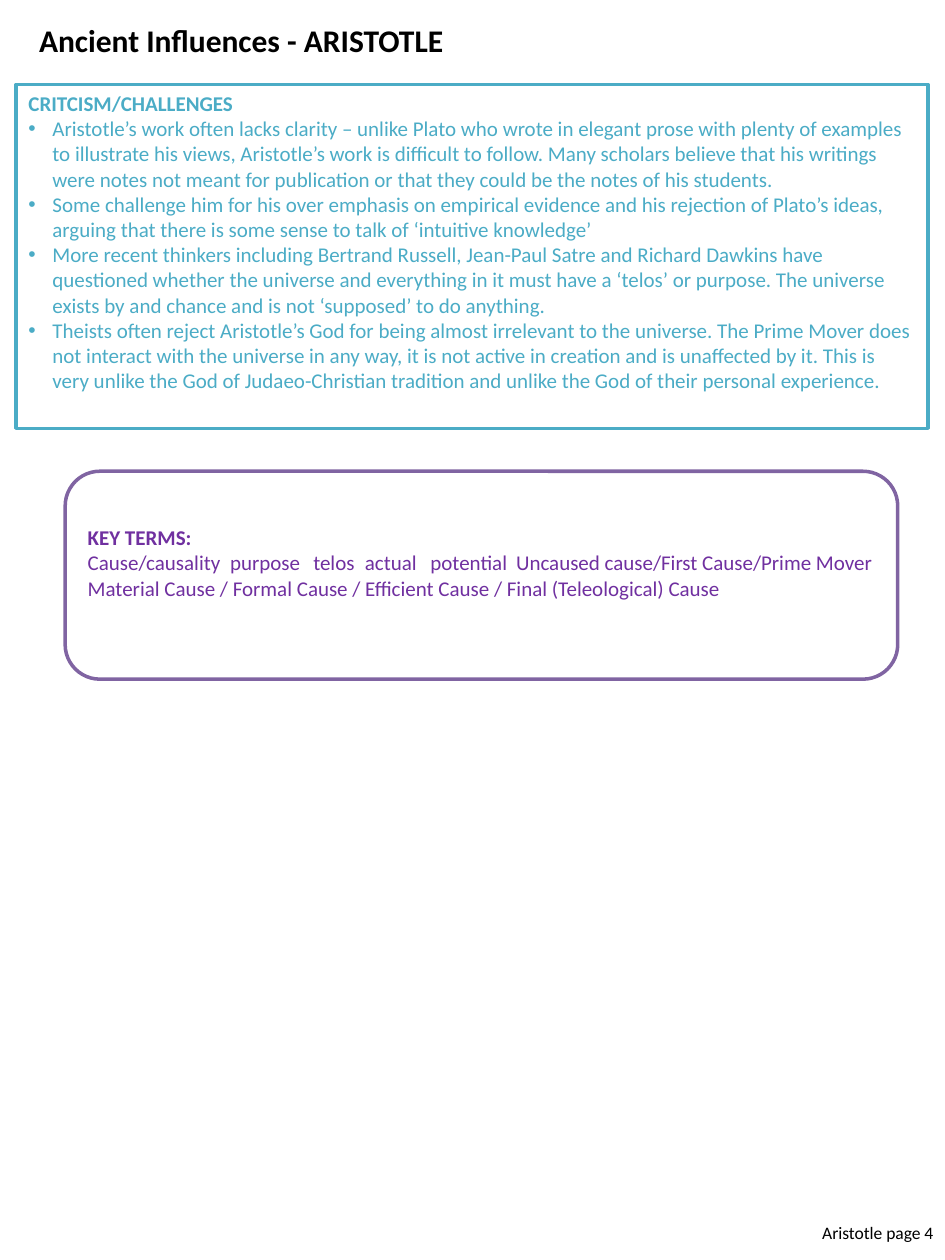
from lxml import etree
from pptx import Presentation
from pptx import util as u
from pptx.dml.color import RGBColor
from pptx.enum import shapes, text
from pptx.oxml.ns import qn

FONT = "Calibri"
BLACK = RGBColor(0x00, 0x00, 0x00)
WHITE = RGBColor(0xFF, 0xFF, 0xFF)
TEAL = RGBColor(0x4B, 0xAC, 0xC6)
LILAC = RGBColor(0x80, 0x64, 0xA2)
PURPLE = RGBColor(0x70, 0x30, 0xA0)

PAGE_WIDTH, PAGE_HEIGHT = 7.5, 10
BULLET_INDENT = 0.19
TERM_STOPS = (1.13, 1.79, 2.2, 2.72, 3.4)

CRITICISMS = (
    "Aristotle’s work often lacks clarity – unlike Plato who wrote in elegant prose with plenty of "
    "examples to illustrate his views, Aristotle’s work is difficult to follow. Many scholars believe "
    "that his writings were notes not meant for publication or that they could be the notes of his "
    "students.",
    "Some challenge him for his over emphasis on empirical evidence and his rejection of Plato’s ideas, "
    "arguing that there is some sense to talk of ‘intuitive knowledge’",
    "More recent thinkers including Bertrand Russell, Jean-Paul Satre and Richard Dawkins have "
    "questioned whether the universe and everything in it must have a ‘telos’ or purpose. The universe "
    "exists by and chance and is not ‘supposed’ to do anything.",
    "Theists often reject Aristotle’s God for being almost irrelevant to the universe. The Prime Mover "
    "does not interact with the universe in any way, it is not active in creation and is unaffected by "
    "it. This is very unlike the God of Judaeo-Christian tradition and unlike the God of their personal "
    "experience.",
)
TERMS = ("Cause/causality", "purpose", "telos", "actual", "potential",
         "Uncaused cause/First Cause/Prime Mover")
CAUSES = "Material Cause / Formal Cause / Efficient Cause / Final (Teleological) Cause"


def place(box, left, top, width, height):
    """Position a box by shares of the page size."""
    box.left, box.width = (u.Inches(PAGE_WIDTH * share) for share in (left, width))
    box.top, box.height = (u.Inches(PAGE_HEIGHT * share) for share in (top, height))


def style(para, size, color, bold=False):
    para.alignment = text.PP_ALIGN.LEFT
    for span in para.runs:
        span.font.name = FONT
        span.font.size = u.Pt(size)
        span.font.bold = bold
        span.font.color.rgb = color


def add_bullet(para):
    props = para._p.get_or_add_pPr()
    props.set("marL", str(u.Inches(BULLET_INDENT)))
    props.set("indent", str(-u.Inches(BULLET_INDENT)))
    etree.SubElement(props, qn("a:buFont"), typeface="Arial")
    etree.SubElement(props, qn("a:buChar"), char="•")


def add_tab_stops(para, stops):
    tabs = etree.SubElement(para._p.get_or_add_pPr(), qn("a:tabLst"))
    for stop in stops:
        etree.SubElement(tabs, qn("a:tab"), pos=str(u.Inches(stop)), algn="l")


def write_line(box, line, size, color, bold=False):
    """Format a single unwrapped line of text."""
    frame = box.text_frame
    frame.text = line
    frame.word_wrap = False
    frame.auto_size = text.MSO_AUTO_SIZE.NONE
    frame.vertical_anchor = text.MSO_ANCHOR.TOP
    style(frame.paragraphs[0], size, color, bold)


def add_panel(page, kind, area, outline, ink, lines):
    """Add an outlined panel whose first line is a bold heading."""
    panel = page.shapes.add_shape(kind, 0, 0, 0, 0)
    place(panel, *area)
    panel.shadow.inherit = False
    panel.fill.solid()
    panel.fill.fore_color.rgb = WHITE
    panel.line.color.rgb = outline
    panel.line.width = u.Pt(2)
    frame = panel.text_frame
    frame.word_wrap = True
    frame.vertical_anchor = text.MSO_ANCHOR.TOP
    frame.text = "\n".join(lines)
    for index, para in enumerate(frame.paragraphs):
        style(para, 12, ink, bold=index == 0)
    return frame


def main():
    deck = Presentation()
    deck.slide_width, deck.slide_height = u.Inches(PAGE_WIDTH), u.Inches(PAGE_HEIGHT)
    page = deck.slides.add_slide(deck.slide_layouts[5])

    # Title
    title = page.shapes.title
    place(title, 0.028, 0.012, 0.459, 0.04)
    write_line(title, "Ancient Influences - ARISTOTLE", 18, BLACK, bold=True)

    # Criticisms
    frame = add_panel(page, shapes.MSO_SHAPE.RECTANGLE, (0.017, 0.067, 0.965, 0.273),
                      TEAL, TEAL, ("CRITCISM/CHALLENGES", *CRITICISMS))
    for para in frame.paragraphs[1:]:
        add_bullet(para)

    # Page label
    label = page.shapes.add_textbox(0, 0, 0, 0)
    place(label, 0.857, 0.965, 0.147, 0.027)
    write_line(label, "Aristotle page 4", 10, BLACK)

    # Key terms, set slightly above the middle
    frame = add_panel(page, shapes.MSO_SHAPE.ROUNDED_RECTANGLE, (0.069, 0.374, 0.881, 0.165),
                      LILAC, PURPLE, ("KEY TERMS:", "\t".join(TERMS), CAUSES))
    frame.vertical_anchor = text.MSO_ANCHOR.MIDDLE
    frame.margin_bottom = u.Inches(0.25)
    add_tab_stops(frame.paragraphs[1], TERM_STOPS)

    deck.save("out.pptx")


if __name__ == "__main__":
    main()
